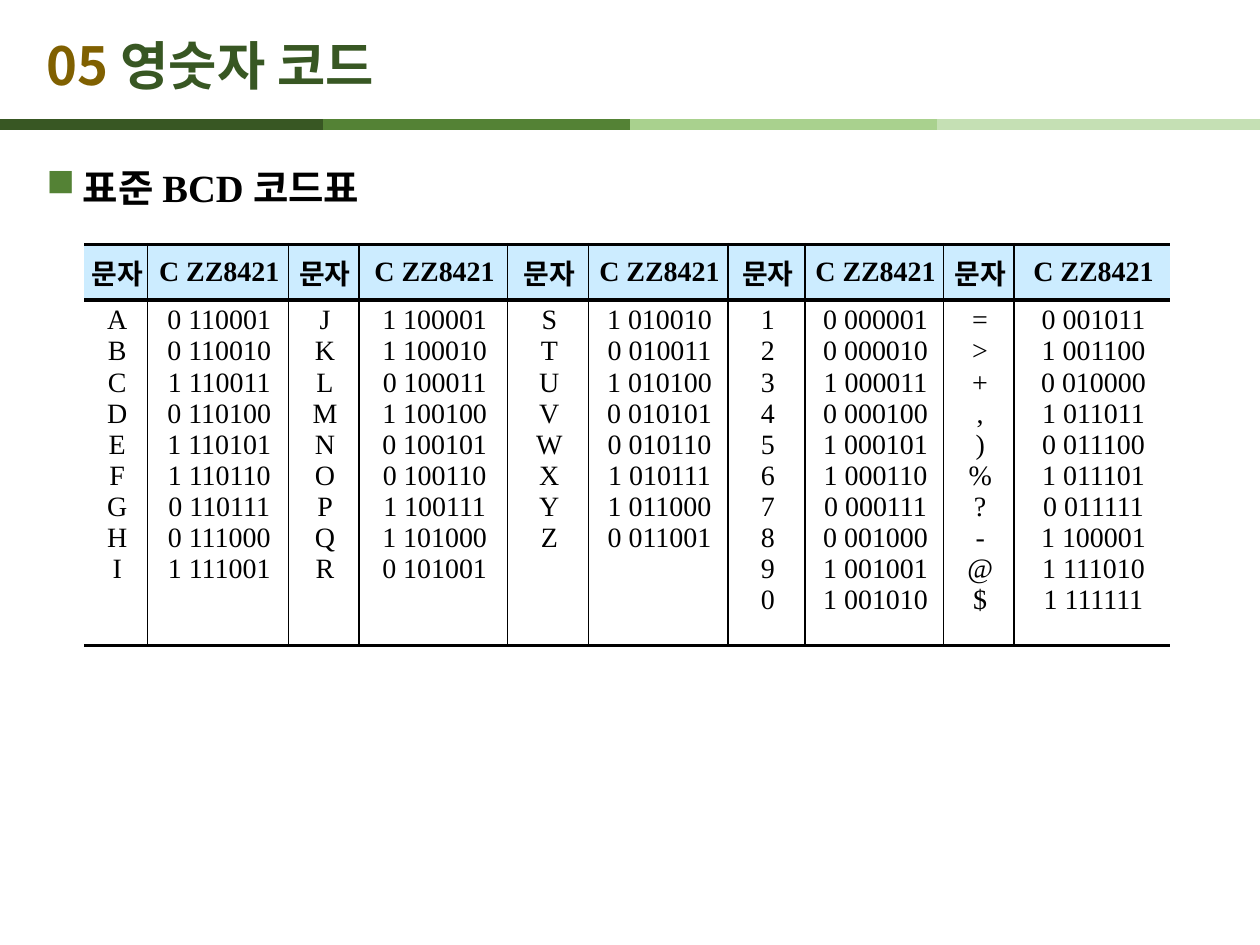
from lxml import etree
from pptx import Presentation, util as u
from pptx.dml.color import RGBColor
from pptx.enum import shapes, text
from pptx.oxml import ns

HANGUL_FONT = "Noto Sans CJK KR"
LATIN_FONT = "Times New Roman"

BAND_WIDTH = 2.56
BANDS = [(0, "385723"), (2.56, "548235"), (5, "A9D18E"), (7.44, "C5E0B4")]

COLUMN_WIDTHS = [0.5, 1.12, 0.56, 1.18, 0.64, 1.11, 0.61, 1.1, 0.56, 1.24]
ROW_HEIGHTS = [0.44, 2.55]
CODE_GROUPS = [
    ("ABCDEFGHI", "110001 110010 110011 110100 110101 110110 110111 111000 111001"),
    ("JKLMNOPQR", "100001 100010 100011 100100 100101 100110 100111 101000 101001"),
    ("STUVWXYZ", "010010 010011 010100 010101 010110 010111 011000 011001"),
    ("1234567890",
     "000001 000010 000011 000100 000101 000110 000111 001000 001001 001010"),
    ("=>+,)%?-@$",
     "001011 001100 010000 011011 011100 011101 011111 100001 111010 111111"),
]


def color(value):
    return RGBColor.from_string(value)


def with_parity(bits):
    """Prefix the check bit that makes the number of ones odd."""
    return f"{(bits.count('1') + 1) % 2} {bits}"


def add_element(parent, tag, **attributes):
    return etree.SubElement(parent, ns.qn(tag), attributes)


class SlideBuilder:
    def __init__(self, slide):
        self.slide = slide

    def style(self, paragraph, size, bold=True, font=LATIN_FONT, fill="000000"):
        paragraph.font.size = u.Pt(size)
        paragraph.font.bold = bold
        paragraph.font.color.rgb = color(fill)
        paragraph.font.name = font
        properties = paragraph._p.pPr.find(ns.qn("a:defRPr"))
        add_element(properties, "a:ea", typeface=HANGUL_FONT)

    def band(self, left, fill):
        y = u.Inches(0.99)
        line = self.slide.shapes.add_connector(
            shapes.MSO_CONNECTOR.STRAIGHT,
            u.Inches(left), y, u.Inches(left + BAND_WIDTH), y)
        line.line.color.rgb = color(fill)
        line.line.width = u.Pt(6)
        add_element(line._element.spPr, "a:effectLst")

    def title(self, number, words):
        title = self.slide.shapes.title
        title.left, title.top = u.Inches(0.27), u.Inches(0.21)
        title.width, title.height = u.Inches(8.27), u.Inches(0.6)
        frame = title.text_frame
        frame.vertical_anchor = text.MSO_ANCHOR.MIDDLE
        paragraph = frame.paragraphs[0]
        paragraph.alignment = text.PP_ALIGN.LEFT
        self.style(paragraph, 30, font=HANGUL_FONT)
        for content, fill in ((number + " ", "806000"), (words, "385723")):
            run = paragraph.add_run()
            run.text = content
            run.font.color.rgb = color(fill)

    def bullet(self, words):
        box = self.slide.shapes.add_textbox(
            u.Inches(0.27), u.Inches(1.07), u.Inches(9.45), u.Inches(5.98))
        box.text_frame.word_wrap = True
        paragraph = box.text_frame.paragraphs[0]
        paragraph.text = words
        paragraph.line_spacing = 1.5
        properties = paragraph._p.get_or_add_pPr()
        indent = u.Inches(0.29)
        properties.set("marL", str(indent))
        properties.set("indent", str(-indent))
        bullet_color = add_element(properties, "a:buClr")
        add_element(bullet_color, "a:srgbClr", val="548235")
        add_element(properties, "a:buChar", char="■")
        self.style(paragraph, 22)

    def borders(self, cell, widths):
        """Draw the left, right, top and bottom borders; a zero width hides one."""
        properties = cell._tc.get_or_add_tcPr()
        for index, (side, width) in enumerate(zip("LRTB", widths)):
            border = etree.Element(ns.qn(f"a:ln{side}"), w=str(u.Pt(width)))
            if width:
                fill = add_element(border, "a:solidFill")
                add_element(fill, "a:srgbClr", val="000000")
            else:
                add_element(border, "a:noFill")
            properties.insert(index, border)

    def cell(self, cell, lines, header):
        cell.margin_left, cell.margin_right = u.Inches(0.02), 0
        cell.margin_top = cell.margin_bottom = u.Inches(0.04)
        if header:
            cell.vertical_anchor = text.MSO_ANCHOR.MIDDLE
            cell.fill.solid()
            cell.fill.fore_color.rgb = color("CCECFF")
        else:
            cell.vertical_anchor = text.MSO_ANCHOR.TOP
            cell.fill.background()
        cell.text_frame.text = "\n".join(lines)
        for paragraph in cell.text_frame.paragraphs:
            paragraph.alignment = text.PP_ALIGN.CENTER
            self.style(paragraph, 16, bold=header)

    def code_table(self):
        columns = []
        for characters, codes in CODE_GROUPS:
            columns.append(("문자", list(characters)))
            columns.append(("C ZZ8421", [with_parity(bits) for bits in codes.split()]))
        table = self.slide.shapes.add_table(
            len(ROW_HEIGHTS), len(columns), u.Inches(0.67), u.Inches(1.94),
            u.Inches(sum(COLUMN_WIDTHS)), u.Inches(sum(ROW_HEIGHTS))).table
        table.first_row = table.horz_banding = False
        for row, height in zip(table.rows, ROW_HEIGHTS):
            row.height = u.Inches(height)
        last = len(columns) - 1
        for index, (heading, lines) in enumerate(columns):
            table.columns[index].width = u.Inches(COLUMN_WIDTHS[index])
            self.cell(table.cell(0, index), [heading], header=True)
            self.cell(table.cell(1, index), lines, header=False)
            for row in range(len(ROW_HEIGHTS)):
                self.borders(table.cell(row, index),
                             (int(index > 0), int(index < last), 2.25, 2.25))


def main():
    presentation = Presentation()
    presentation.slide_width = u.Inches(10)
    presentation.slide_height = u.Inches(7.5)
    builder = SlideBuilder(
        presentation.slides.add_slide(presentation.slide_layouts[5]))
    for left, fill in BANDS:
        builder.band(left, fill)
    builder.title("05", "영숫자 코드")
    builder.bullet("표준 BCD 코드표")
    builder.code_table()
    presentation.save("out.pptx")


if __name__ == "__main__":
    main()
